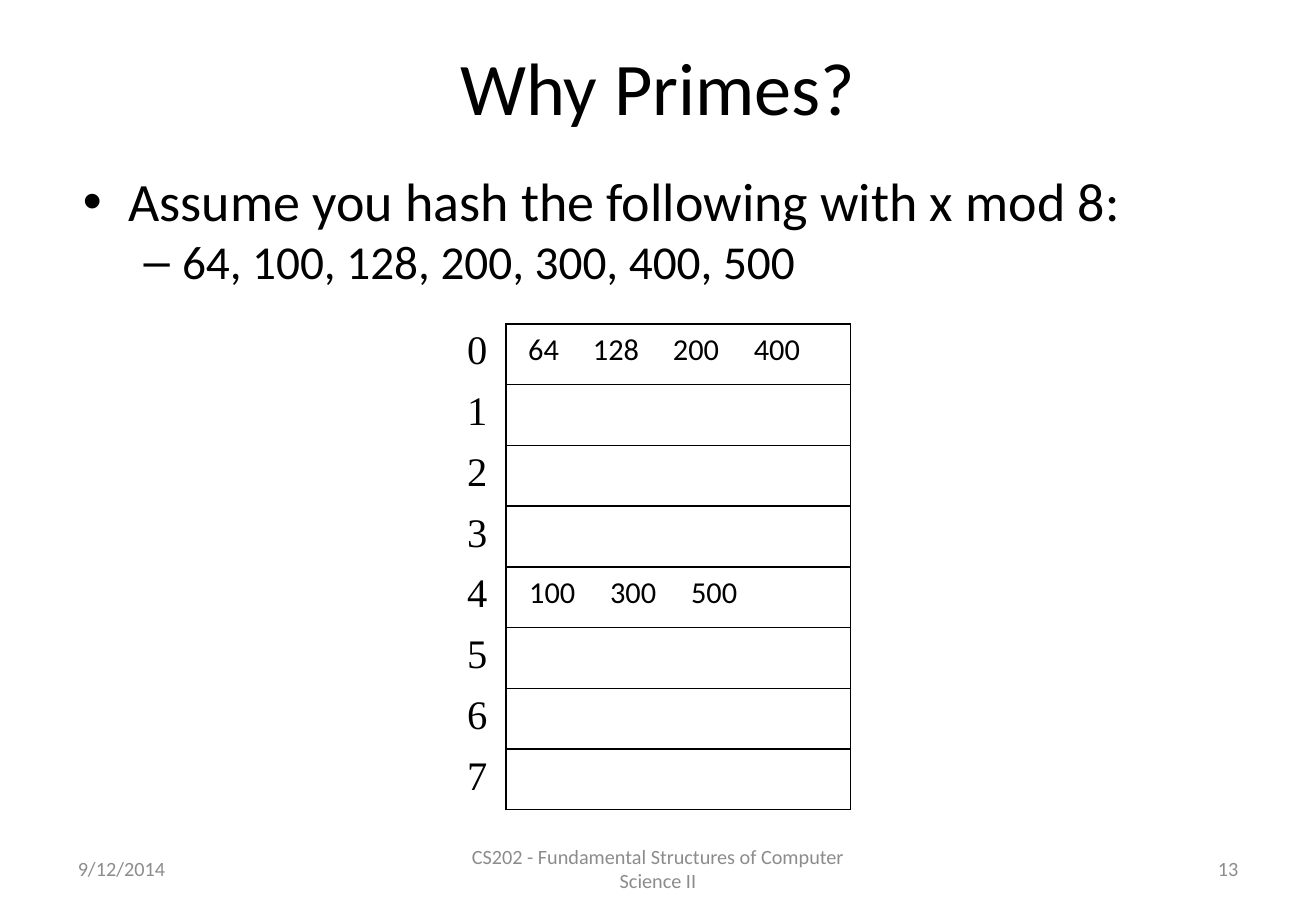
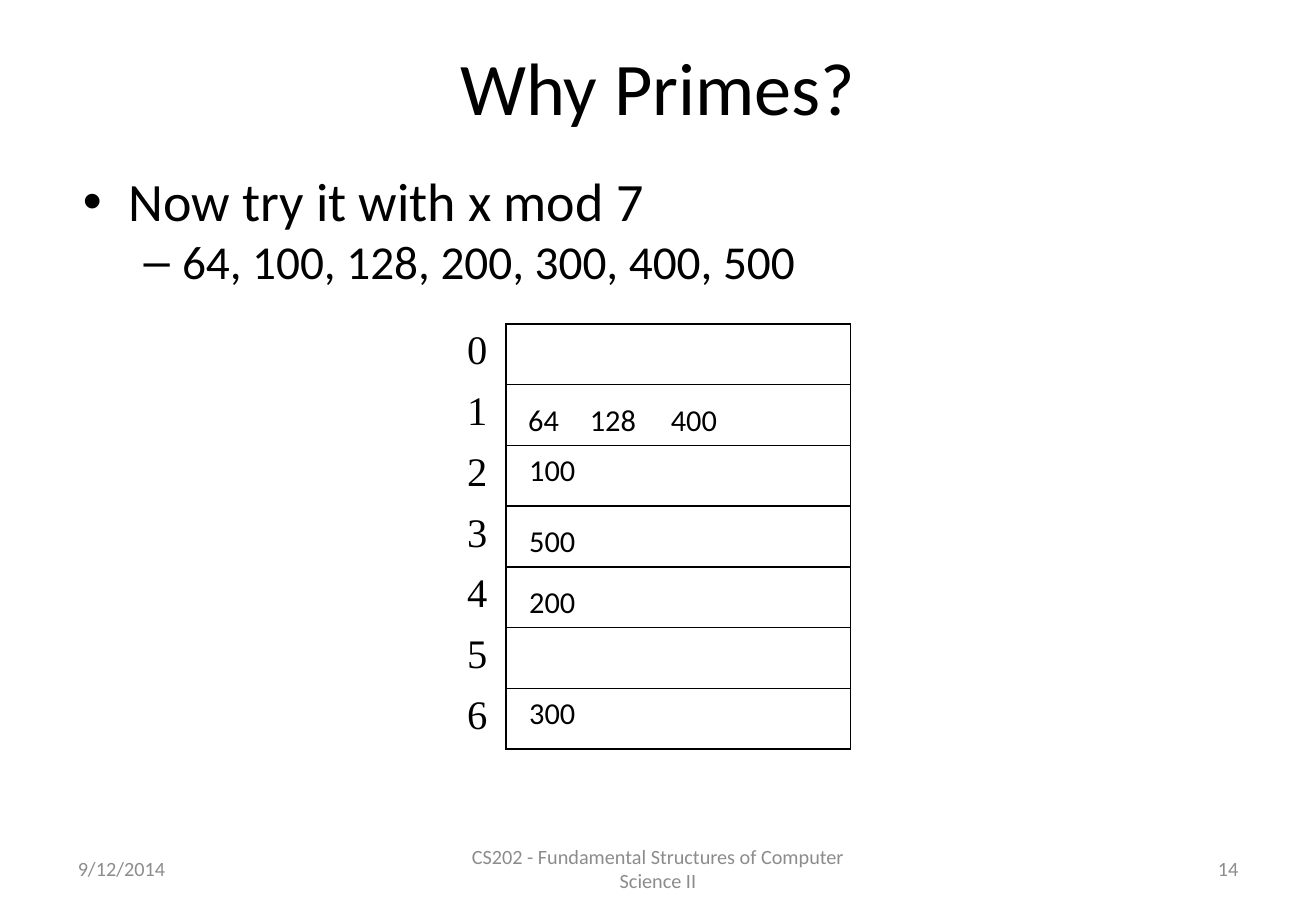
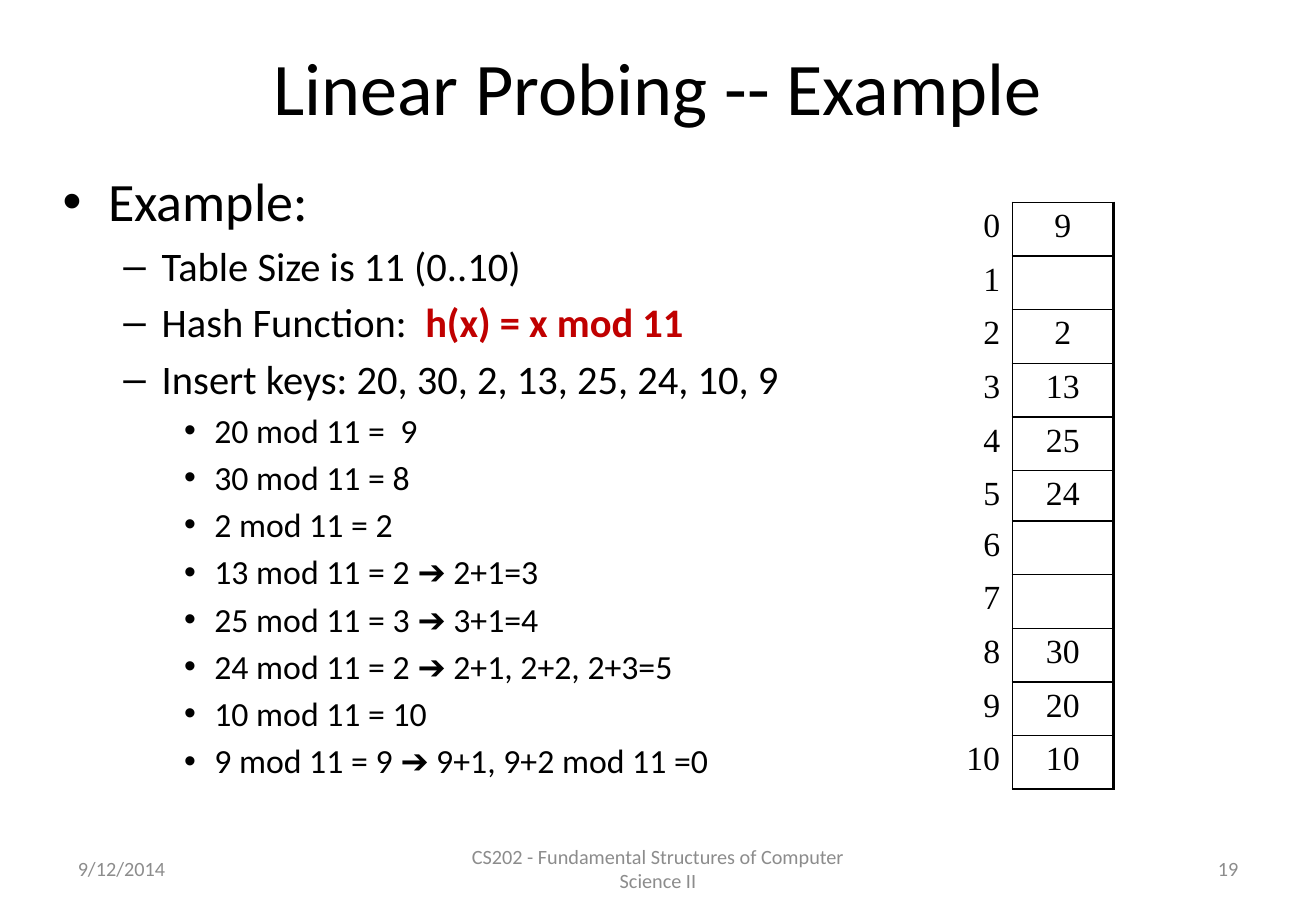
import pptx
import pptx.util
import pptx.dml.color
import pptx.enum.text
import pptx.oxml.ns
import lxml.etree

PX = 7620  # EMU in one px, 120 px to the inch
COLORS = {"text": "000000", "footer": "8C8C8C", "accent": "C00000"}
SANS, SERIF = "Calibri", "Times New Roman"
ALIGN = pptx.enum.text.PP_ALIGN
MIDDLE = pptx.enum.text.MSO_ANCHOR.MIDDLE

TITLE_BOX = (65, 30, 1170, 110)
FOOTER_TOP, FOOTER_HEIGHT = 834, 48
DATE = "9/12/2014"
COURSE = "CS202 - Fundamental Structures of Computer Science II"

# Outline levels: bullet, left margin, hanging indent
LEVELS = [("•", 45, -45), ("–", 98, -38), ("•", 150, -30)]


def px(length):
    return pptx.util.Emu(length * PX)


def add_run(para, text, size, color="text", font=SANS, bold=False):
    span = para.add_run()
    span.text = text
    span.font.size = pptx.util.Pt(size)
    span.font.name = font
    span.font.bold = bold
    span.font.color.rgb = pptx.dml.color.RGBColor.from_string(COLORS[color])


def add_text_box(page, box, wrap=True):
    frame = page.shapes.add_textbox(*map(px, box)).text_frame
    frame.word_wrap = wrap
    return frame


def add_xml(parent, tag, **attributes):
    return lxml.etree.SubElement(parent, pptx.oxml.ns.qn(tag), **attributes)


# Title and the three footer fields, shared by all slides
def add_page(deck, title, number):
    page = deck.slides.add_slide(deck.slide_layouts[5])
    shape = page.shapes.title
    shape.left, shape.top, shape.width, shape.height = map(px, TITLE_BOX)
    shape.text_frame.vertical_anchor = MIDDLE
    para = shape.text_frame.paragraphs[0]
    para.alignment = ALIGN.CENTER
    add_run(para, title, 44)
    footers = [(65, 304, DATE, ALIGN.LEFT),
               (444, 412, COURSE, ALIGN.CENTER),
               (931, 304, str(number), ALIGN.RIGHT)]
    for left, width, text, alignment in footers:
        frame = add_text_box(page, (left, FOOTER_TOP, width, FOOTER_HEIGHT))
        frame.vertical_anchor = MIDDLE
        para = frame.paragraphs[0]
        para.alignment = alignment
        add_run(para, text, 12, "footer")
    return page


# Bulleted outline: items are (level, [(text, color, bold), ...])
def add_outline(page, box, items, sizes, spacing):
    frame = add_text_box(page, box)
    for index, (level, runs) in enumerate(items):
        para = frame.add_paragraph() if index else frame.paragraphs[0]
        para.level = level
        para.space_before = pptx.util.Pt(sizes[level] * spacing if index else 0)
        bullet, margin, indent = LEVELS[level]
        properties = para._p.get_or_add_pPr()
        properties.set("marL", str(px(margin)))
        properties.set("indent", str(px(indent)))
        add_xml(properties, "a:buFont", typeface="Arial")
        add_xml(properties, "a:buChar", char=bullet)
        for text, color, bold in runs:
            add_run(para, text, sizes[level], color, bold=bold)


def plain(level, text):
    return level, [(text, "text", False)]


# Borders in points for left, right, top, bottom; 0 means none
def set_borders(cell, widths):
    properties = cell._tc.get_or_add_tcPr()
    for index, (side, width) in enumerate(zip("LRTB", widths)):
        line = lxml.etree.Element(pptx.oxml.ns.qn(f"a:ln{side}"),
                                  w=str(pptx.util.Pt(width)))
        if width:
            fill = add_xml(line, "a:solidFill")
            add_xml(fill, "a:srgbClr", val=COLORS["text"])
        else:
            add_xml(line, "a:noFill")
        properties.insert(index, line)


# Two-column hash table: slot numbers beside bordered slots
def add_hash_table(page, left, top, columns, heights, slots, size,
                   alignment, label_margin, right_border):
    table = page.shapes.add_table(
        len(heights), 2, px(left), px(top), px(sum(columns)), px(sum(heights))).table
    table.first_row = table.horz_banding = False
    for column, width in zip(table.columns, columns):
        column.width = px(width)
    for index, height in enumerate(heights):
        table.rows[index].height = px(height)
        label, slot = table.cell(index, 0), table.cell(index, 1)
        label.margin_left = px(label_margin)
        set_borders(label, (0, 1, 0, 0))
        set_borders(slot, (1, right_border, 1, 1))
        texts = [(label, str(index), alignment), (slot, slots.get(index), ALIGN.CENTER)]
        for cell, text, cell_alignment in texts:
            cell.fill.background()
            cell.margin_top = cell.margin_bottom = px(5)
            if text:
                para = cell.text_frame.paragraphs[0]
                para.alignment = cell_alignment
                add_run(para, text, size, font=SERIF)


# Slide with a modulus table; chains are (row, drop within row, {key: left})
def add_primes_page(deck, number, heading, slot_count, chains):
    page = add_page(deck, "Why Primes?", number)
    add_outline(page, (70, 160, 1170, 150),
                [plain(0, heading), plain(1, "64, 100, 128, 200, 300, 400, 500")],
                (32, 28), 0)
    left, top, row_height = 450, 320, 60
    add_hash_table(page, left, top, (50, 340), [row_height] * slot_count, {}, 24,
                   ALIGN.CENTER, 5, 1)
    for row, drop, keys in chains:
        for key, offset in keys.items():
            width = 54 if len(key) == 2 else 71
            box = (left + offset, top + row * row_height + drop, width, 48)
            frame = add_text_box(page, box, wrap=False)
            frame.auto_size = pptx.enum.text.MSO_AUTO_SIZE.SHAPE_TO_FIT_TEXT
            para = frame.paragraphs[0]
            para.alignment = ALIGN.CENTER
            add_run(para, key, 18)


def add_probing_page(deck, number):
    page = add_page(deck, "Linear Probing -- Example", number)
    steps = ["20 mod 11 =  9", "30 mod 11 = 8", "2 mod 11 = 2",
             "13 mod 11 = 2 ➔ 2+1=3", "25 mod 11 = 3 ➔ 3+1=4",
             "24 mod 11 = 2 ➔ 2+1, 2+2, 2+3=5", "10 mod 11 = 10",
             "9 mod 11 = 9 ➔ 9+1, 9+2 mod 11 =0"]
    items = [plain(0, "Example:"),
             plain(1, "Table Size is 11 (0..10)"),
             (1, [("Hash Function:  ", "text", False),
                  ("h(x) = x mod 11", "accent", True)]),
             plain(1, "Insert keys: 20, 30, 2, 13, 25, 24, 10, 9")]
    items += [plain(2, step) for step in steps]
    add_outline(page, (50, 160, 810, 670), items, (32, 24, 20), 0.2)
    slots = {0: "9", 2: "2", 3: "13", 4: "25", 5: "24", 8: "30", 9: "20", 10: "10"}
    heights = [48 if index == 5 else 53 for index in range(11)]
    add_hash_table(page, 930, 200, (70, 100), heights, slots, 20,
                   ALIGN.RIGHT, 12, 2.25)


def main():
    deck = pptx.Presentation()
    deck.slide_width, deck.slide_height = px(1300), px(900)
    add_primes_page(deck, 13, "Assume you hash the following with x mod 8:", 8, [
        (0, 0, {"64": 60, "128": 123, "200": 202, "400": 282}),
        (4, 0, {"100": 60, "300": 140, "500": 220})])
    add_primes_page(deck, 14, "Now try it with x mod 7", 7, [
        (1, 10, {"64": 60, "128": 120, "400": 200}),
        (2, 0, {"100": 60}),
        (3, 10, {"500": 60}),
        (4, 10, {"200": 60}),
        (6, 0, {"300": 60})])
    add_probing_page(deck, 19)
    deck.save("out.pptx")


if __name__ == "__main__":
    main()
